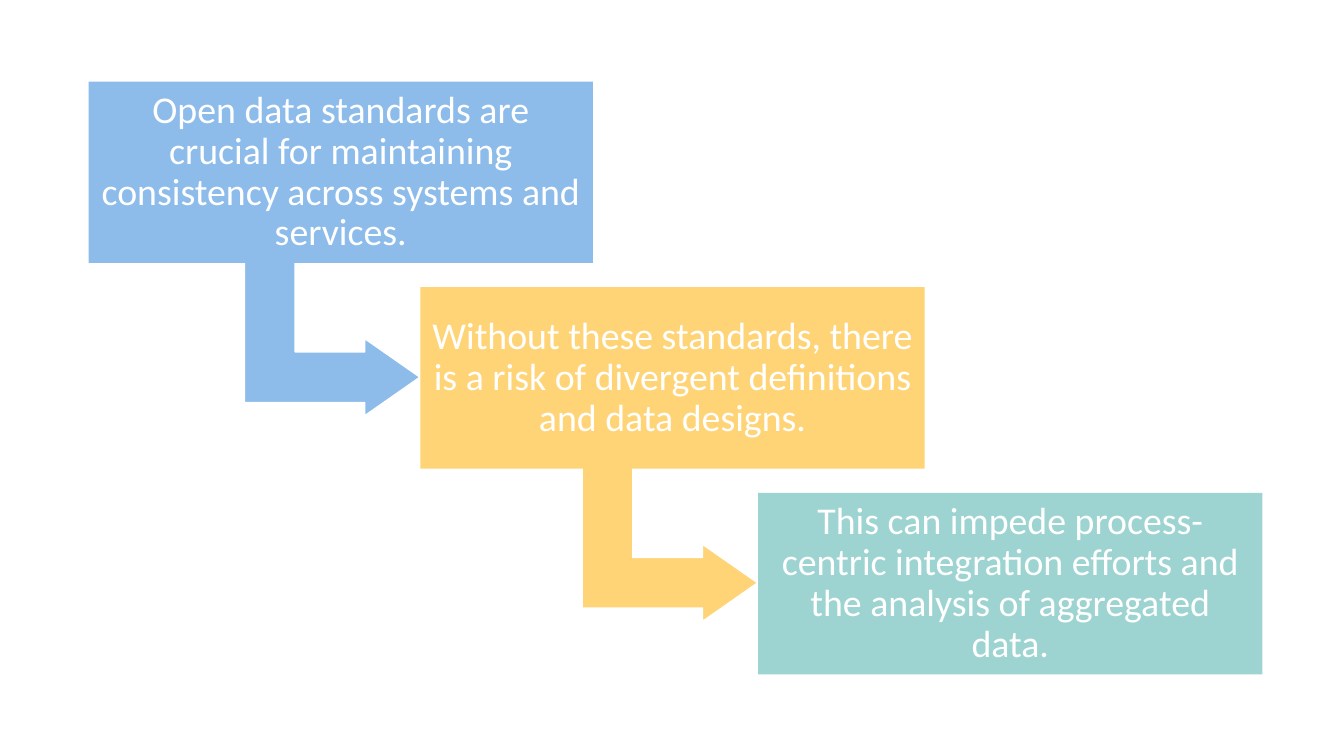
"""Build a slide of three descending steps joined by bent arrows."""
import pptx
import pptx.util
import pptx.dml.color
import pptx.enum.shapes
import pptx.enum.text

Inches = pptx.util.Inches
KINDS = pptx.enum.shapes.MSO_SHAPE

WIDE, HIGH = 5, 1.8
TOP, DROP = 0.81, 2.04
WHITE = "FFFFFF"

STEPS = [
    (0.88, "8DBCEB", "Open data standards are crucial for maintaining "
                     "consistency across systems and services."),
    (4.17, "FFD477", "Without these standards, there is a risk of "
                     "divergent definitions and data designs."),
    (7.52, "9DD4D1", "This can impede process-centric integration efforts "
                     "and the analysis of aggregated data."),
]


def paint(target, color):
    """Give a fill or line format a solid hex colour."""
    target.solid()
    target.fore_color.rgb = pptx.dml.color.RGBColor.from_string(color)


def add_shape(slide, kind, left, top, wide, high, color):
    """Add a flat filled shape."""
    shape = slide.shapes.add_shape(
        kind, Inches(left), Inches(top), Inches(wide), Inches(high))
    shape.shadow.inherit = False
    paint(shape.fill, color)
    return shape


def add_arrow(slide, left, top, color):
    """Add an arrow that runs down and then right to the next step."""
    arrow = add_shape(slide, KINDS.BENT_UP_ARROW, left, top, 1.53, 1.74, color)
    arrow.rotation = 90
    for place, value in enumerate((0.328, 0.25, 0.358)):
        arrow.adjustments[place] = value
    paint(arrow.line.fill, WHITE)
    arrow.line.width = pptx.util.Pt(1)


def add_step(slide, left, top, color, text):
    """Add a step box with centred text."""
    box = add_shape(slide, KINDS.RECTANGLE, left, top, WIDE, HIGH, color)
    box.line.fill.background()
    frame = box.text_frame
    frame.word_wrap = True
    frame.vertical_anchor = pptx.enum.text.MSO_ANCHOR.MIDDLE
    frame.margin_left = frame.margin_right = Inches(0.11)
    frame.margin_top = frame.margin_bottom = Inches(0.11)
    para = frame.paragraphs[0]
    para.alignment = pptx.enum.text.PP_ALIGN.CENTER
    para.line_spacing = 0.9
    run = para.add_run()
    run.text = text
    run.font.name = "Calibri"
    run.font.size = pptx.util.Pt(27)
    paint(run.font.fill, WHITE)


def main():
    """Build and save the slide."""
    deck = pptx.Presentation()
    deck.slide_width, deck.slide_height = Inches(13.33), Inches(7.5)
    slide = deck.slides.add_slide(deck.slide_layouts[6])
    for rank, (left, color, text) in enumerate(STEPS):
        top = TOP + rank * DROP
        if rank + 1 < len(STEPS):
            add_arrow(slide, STEPS[rank + 1][0] - 1.64, top + 1.68, color)
        add_step(slide, left, top, color, text)
    deck.save("out.pptx")


if __name__ == "__main__":
    main()
